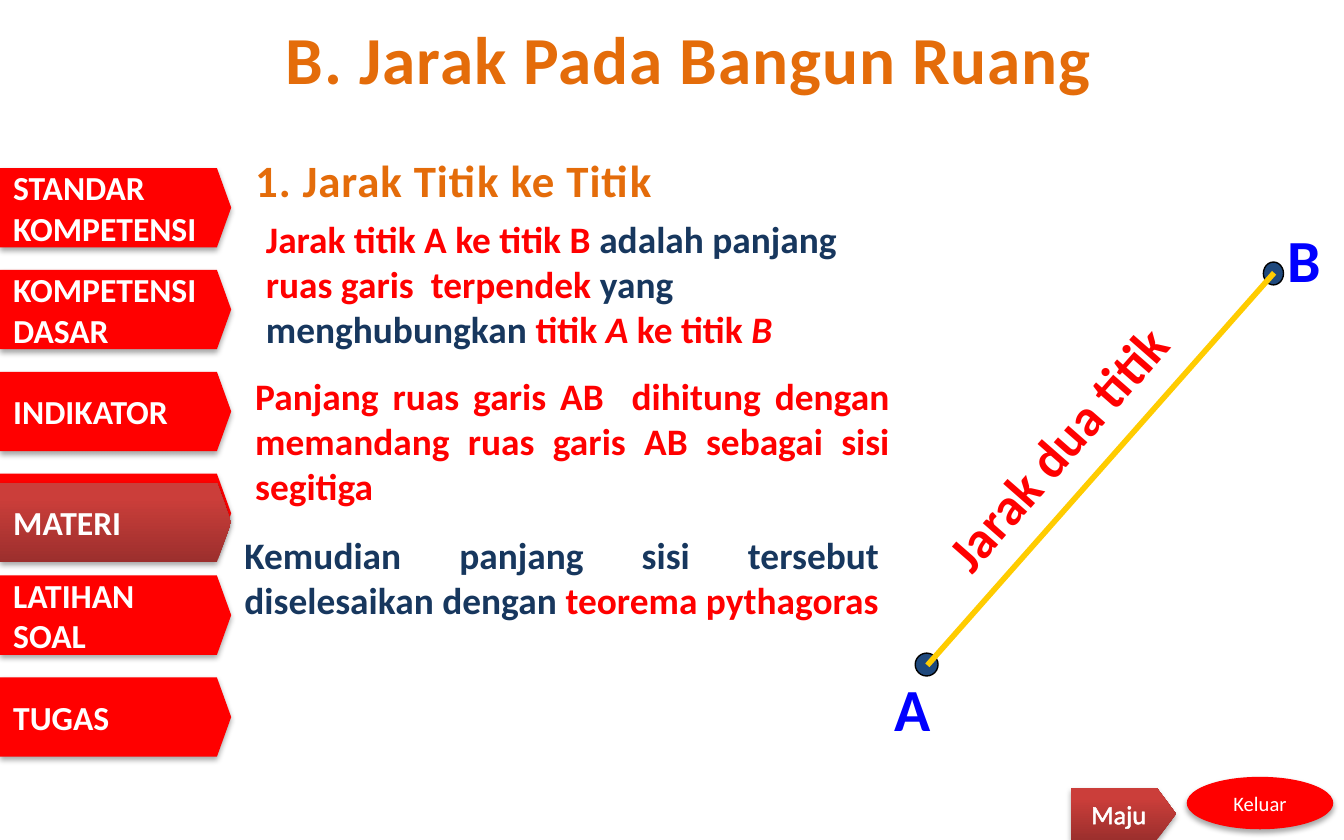
from lxml import etree
from pptx import Presentation, util as u
from pptx.dml.color import RGBColor
from pptx.enum import shapes, text
from pptx.oxml import parse_xml

W, H = 10, 6.25
FONT = "Calibri"
NS = "http://schemas.openxmlformats.org/drawingml/2006/main"
RED, NAVY, ORANGE, BLUE, WHITE = "FF0000", "17375E", "E46C0A", "0000FF", "FFFFFF"
DOT = "1F497D"
FADE = ("9C2F2D", "CB3E3A")
TAB_W, TAB_H = 1.72, 0.59
TAB_TOP, TAB_STEP = 1.25, (5.04 - 1.25) / 5
MENU = ["STANDAR KOMPETENSI", "KOMPETENSI DASAR", "INDIKATOR",
        "MATERI", "LATIHAN SOAL", "TUGAS"]
LEFT, MID = text.PP_ALIGN.LEFT, text.PP_ALIGN.CENTER
JUST = text.PP_ALIGN.JUSTIFY
TAG, OVAL = shapes.MSO_SHAPE.PENTAGON, shapes.MSO_SHAPE.OVAL


def rgb(code):
    return RGBColor.from_string(code)


def inches(*nums):
    return [u.Inches(n) for n in nums]


def write(frame, runs, size, bold=True, align=LEFT, space=0):
    """Fill a frame with one paragraph of (words, colour, italic) runs."""
    frame.word_wrap = True
    para = frame.paragraphs[0]
    para.alignment = align
    font = para.font
    font.name, font.size, font.bold = FONT, u.Pt(size), bold
    font.color.rgb = rgb(runs[0][1])
    if space:
        para._p.get_or_add_pPr().get_or_add_defRPr().set("spc", str(space))
    for words, color, *slant in runs:
        run = para.add_run()
        run.text = words
        if color != runs[0][1]:
            run.font.color.rgb = rgb(color)
        if slant:
            run.font.italic = True
    return para


def label(slide, box, runs, size, align=LEFT, space=0, turn=0):
    item = slide.shapes.add_textbox(*inches(*box))
    item.rotation = turn
    write(item.text_frame, runs, size, align=align, space=space)
    return item


def cast(shape):
    """Give a shape a soft shadow below it."""
    shape.shadow.inherit = False
    glow = shape._element.spPr.find(f"{{{NS}}}effectLst")
    glow.append(parse_xml(
        f'<a:outerShdw xmlns:a="{NS}" blurRad="39370" dist="22860" '
        'dir="5400000" rotWithShape="0"><a:srgbClr val="000000">'
        '<a:alpha val="35000"/></a:srgbClr></a:outerShdw>'))


def button(slide, kind, box, words, size, bold=True, align=LEFT, point=None, fade=False):
    item = slide.shapes.add_shape(kind, *inches(*box))
    if point:
        item.adjustments[0] = point
    if fade:
        item.fill.gradient()
        item.fill.gradient_angle = 90
        for stop, color, pos in zip(item.fill.gradient_stops, FADE, (0, 0.8)):
            stop.color.rgb, stop.position = rgb(color), pos
    else:
        item.fill.solid()
        item.fill.fore_color.rgb = rgb(RED)
    item.line.fill.background()
    cast(item)
    item.text_frame.vertical_anchor = text.MSO_ANCHOR.MIDDLE
    return write(item.text_frame, [(words, WHITE)], size, bold, align)


def tab(slide, top, words, fade=False):
    button(slide, TAG, (0, top, TAB_W, TAB_H), words, 18, point=0.18, fade=fade)


def edge(para, color, width):
    """Outline the letters of a paragraph."""
    for run in para.runs:
        run._r.get_or_add_rPr().insert(0, parse_xml(
            f'<a:ln xmlns:a="{NS}" w="{int(u.Pt(width))}"><a:solidFill>'
            f'<a:srgbClr val="{color}"/></a:solidFill></a:ln>'))


def dot(slide, box):
    item = slide.shapes.add_shape(OVAL, *inches(*box))
    item.shadow.inherit = False
    item.fill.solid()
    item.fill.fore_color.rgb = rgb(DOT)
    item.line.color.rgb = rgb("000000")
    item.line.width = u.Pt(0.75)


def segment(slide, start, end):
    item = slide.shapes.add_connector(
        shapes.MSO_CONNECTOR.STRAIGHT, *inches(*start, *end))
    item.line.color.rgb = rgb("FFCC00")
    item.line.width = u.Pt(3)
    etree.SubElement(item._element.spPr, f"{{{NS}}}effectLst")


def menu(slide):
    for row, words in enumerate(MENU):
        tab(slide, TAB_TOP + row * TAB_STEP, words)
    button(slide, OVAL, (8.83, 5.78, 1.09, 0.39), "Keluar", 11, False, MID)
    edge(button(slide, TAG, (7.97, 5.86, 0.78, 0.39), "Maju", 14, False, MID,
                0.37, True), WHITE, 1.45)
    tab(slide, 3.59, "MATERI", fade=True)


def lesson(slide):
    head = label(slide, (2.03, 0, W - 2.03, 0.86),
                 [("B. Jarak Pada Bangun Ruang", ORANGE)], 36, space=50)
    head.text_frame.vertical_anchor = text.MSO_ANCHOR.MIDDLE
    label(slide, (1.8, 1.09, 4.45, 0.5),
          [("1. Jarak Titik ke Titik", ORANGE)], 24, JUST, 50)
    label(slide, (1.88, 1.56, 4.61, 1.11), [
        ("Jarak titik A ke titik B ", RED), ("adalah panjang ", NAVY),
        ("ruas garis  terpendek ", RED), ("yang menghubungkan ", NAVY),
        ("titik ", RED), ("A ", RED, True), ("ke titik ", RED), ("B", RED, True)], 20)
    label(slide, (1.8, 2.73, 4.92, 1.11), [
        ("Panjang ruas garis AB  dihitung dengan memandang "
         "ruas garis AB sebagai sisi segitiga", RED)], 20, JUST)
    label(slide, (1.72, 3.91, 4.92, 0.77), [
        ("Kemudian panjang sisi tersebut diselesaikan dengan ", NAVY),
        ("teorema pythagoras", RED)], 20, JUST)


def figure(slide):
    label(slide, (6.56, 4.95, 0.5, 0.63), [("A", BLUE)], 32)
    dot(slide, (6.81, 4.86, 0.17, 0.17))
    dot(slide, (9.4, 1.95, 0.15, 0.17))
    label(slide, (9.48, 1.61, 0.5, 0.63), [("B", BLUE)], 32)
    segment(slide, (6.9, 4.95), (9.48, 2.03))
    label(slide, (6.57, 2.9, 2.84, 0.57), [("Jarak dua titik", RED)], 28, turn=311.2)


def main():
    deck = Presentation()
    deck.slide_width, deck.slide_height = inches(W, H)
    slide = deck.slides.add_slide(deck.slide_layouts[6])
    menu(slide)
    lesson(slide)
    figure(slide)
    deck.save("out.pptx")


if __name__ == "__main__":
    main()
